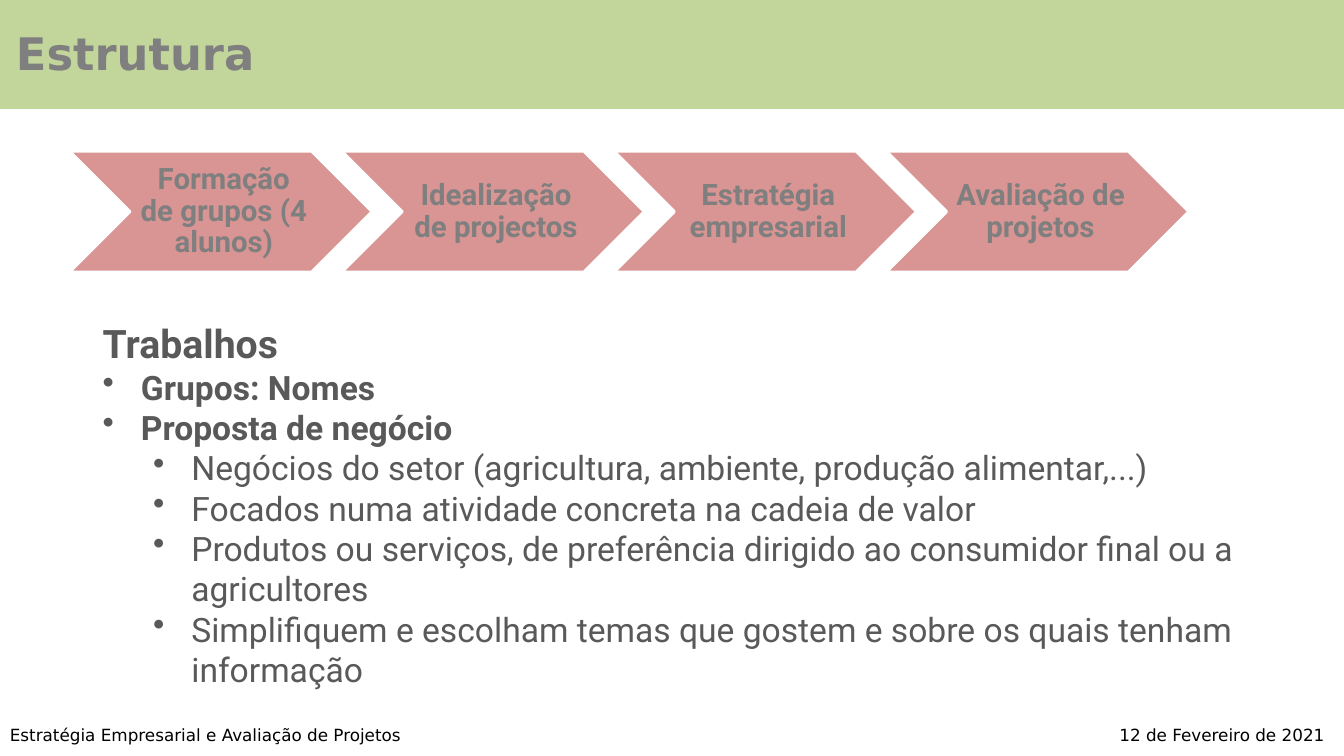
"""Build the course structure slide with its process chevrons and assignment list."""
from dataclasses import dataclass
from typing import Any

from lxml.etree import SubElement
from pptx import Presentation
from pptx.dml.color import RGBColor
from pptx.enum.shapes import MSO_SHAPE
from pptx.enum.text import MSO_ANCHOR, MSO_AUTO_SIZE, PP_ALIGN
from pptx.oxml.ns import qn
from pptx.util import Inches, Pt


@dataclass(frozen=True)
class Theme:
    """Colours, fonts and type sizes of the slide."""
    band: str = "C2D59B"
    step: str = "D99593"
    outline: str = "FFFFFF"
    heading: str = "7F7F7F"
    body: str = "595959"
    footer: str = "000000"
    frame_font: str = "DejaVu Sans"
    content_font: str = "Roboto"
    title_size: float = 32
    section_size: float = 28
    item_size: float = 24
    step_size: float = 21
    footer_size: float = 12
    line_width: float = 2


@dataclass(frozen=True)
class Box:
    """Position and size in inches."""
    left: float
    top: float
    width: float
    height: float

    def lengths(self) -> list[int]:
        """Return left, top, width and height as lengths."""
        return [Inches(v) for v in (self.left, self.top, self.width, self.height)]


@dataclass(frozen=True)
class Style:
    """Look of a run of text."""
    font: str
    size: float
    color: str
    bold: bool = False


@dataclass(frozen=True)
class Line:
    """One paragraph, with a bullet when it has an indent."""
    text: str
    style: Style
    indent: float = 0
    level: int = 0
    align: PP_ALIGN = PP_ALIGN.LEFT


THEME = Theme()
TITLE = Style(THEME.frame_font, THEME.title_size, THEME.heading, True)
FOOTER = Style(THEME.frame_font, THEME.footer_size, THEME.footer)
STEP = Style(THEME.content_font, THEME.step_size, THEME.heading, True)
SECTION = Style(THEME.content_font, THEME.section_size, THEME.body, True)
TOPIC = Style(THEME.content_font, THEME.item_size, THEME.body, True)
DETAIL = Style(THEME.content_font, THEME.item_size, THEME.body)

HANGING = 0.38
DETAIL_INDENT = 0.88
STEP_PITCH = 2.7
BAND = Box(-0.05, -0.03, 13.38, 1.1)
FIRST_STEP = Box(0.69, 1.5, 3, 1.2)
STEPS = (
    "Formação de grupos (4 alunos)",
    "Idealização de projectos",
    "Estratégia empresarial",
    "Avaliação de projetos",
)
TOPICS = ("Grupos: Nomes", "Proposta de negócio")
DETAILS = (
    "Negócios do setor (agricultura, ambiente, produção alimentar,...)",
    "Focados numa atividade concreta na cadeia de valor",
    "Produtos ou serviços, de preferência dirigido ao consumidor final ou a agricultores",
    "Simplifiquem e escolham temas que gostem e sobre os quais tenham informação",
)
ASSIGNMENTS = (
    Line("Trabalhos", SECTION),
    *(Line(topic, TOPIC, HANGING) for topic in TOPICS),
    *(Line(detail, DETAIL, DETAIL_INDENT, 1) for detail in DETAILS),
)
TEXTS = (
    (Box(0, 7.14, 4.14, 0.3),
     (Line("Estratégia Empresarial e Avaliação de Projetos", FOOTER),)),
    (Box(10.96, 7.14, 2.33, 0.3),
     (Line("12 de Fevereiro de 2021 ", FOOTER, align=PP_ALIGN.RIGHT),)),
    (Box(0.06, 0.21, 2.57, 0.64), (Line("Estrutura", TITLE),)),
    (Box(0.92, 3.12, 11.97, 4.61), ASSIGNMENTS),
)


def apply(target: Any, values: dict[str, Any]) -> None:
    """Set each named attribute on the target."""
    for name, value in values.items():
        setattr(target, name, value)


def add_bullet(paragraph: Any, line: Line) -> None:
    """Give a paragraph a hanging bullet."""
    properties = paragraph._p.get_or_add_pPr()
    properties.set("marL", str(Inches(line.indent)))
    properties.set("indent", str(-Inches(HANGING)))
    bullet_color = SubElement(properties, qn("a:buClr"))
    SubElement(bullet_color, qn("a:srgbClr")).set("val", line.style.color)
    SubElement(properties, qn("a:buChar")).set("char", "•")


def write_line(paragraph: Any, line: Line) -> None:
    """Write and format one paragraph."""
    style = line.style
    apply(paragraph, {"alignment": line.align, "level": line.level})
    run = paragraph.add_run()
    run.text = line.text
    apply(run.font, {"name": style.font, "size": Pt(style.size), "bold": style.bold})
    run.font.color.rgb = RGBColor.from_string(style.color)
    if line.indent:
        add_bullet(paragraph, line)


def add_text(slide: Any, box: Box, lines: tuple[Line, ...]) -> None:
    """Add a text box holding the given lines."""
    frame = slide.shapes.add_textbox(*box.lengths()).text_frame
    apply(frame, {"word_wrap": True, "auto_size": MSO_AUTO_SIZE.SHAPE_TO_FIT_TEXT})
    for index, line in enumerate(lines):
        write_line(frame.add_paragraph() if index else frame.paragraphs[0], line)


def add_block(slide: Any, kind: MSO_SHAPE, box: Box, fill: str, outline: str) -> Any:
    """Add a filled and outlined shape without a shadow."""
    block = slide.shapes.add_shape(kind, *box.lengths())
    block.shadow.inherit = False
    block.fill.solid()
    block.fill.fore_color.rgb = RGBColor.from_string(fill)
    block.line.color.rgb = RGBColor.from_string(outline)
    block.line.width = Pt(THEME.line_width)
    return block


def add_step(slide: Any, position: int, label: str) -> None:
    """Add one labelled chevron of the process."""
    first = FIRST_STEP
    box = Box(first.left + position * STEP_PITCH, first.top, first.width, first.height)
    chevron = add_block(slide, MSO_SHAPE.CHEVRON, box, THEME.step, THEME.outline)
    frame = chevron.text_frame
    apply(frame, {
        "word_wrap": True,
        "vertical_anchor": MSO_ANCHOR.MIDDLE,
        "margin_left": Inches(0.09),
        "margin_top": Inches(0.03),
        "margin_right": Inches(0.03),
        "margin_bottom": Inches(0.03),
    })
    paragraph = frame.paragraphs[0]
    paragraph.line_spacing = 0.9
    write_line(paragraph, Line(label, STEP, align=PP_ALIGN.CENTER))


def main() -> None:
    """Build and save the slide."""
    deck = Presentation()
    apply(deck, {"slide_width": Inches(13.33), "slide_height": Inches(7.5)})
    slide = deck.slides.add_slide(deck.slide_layouts[6])
    add_block(slide, MSO_SHAPE.RECTANGLE, BAND, THEME.band, THEME.band)
    for position, label in enumerate(STEPS):
        add_step(slide, position, label)
    for box, lines in TEXTS:
        add_text(slide, box, lines)
    deck.save("out.pptx")


if __name__ == "__main__":
    main()
